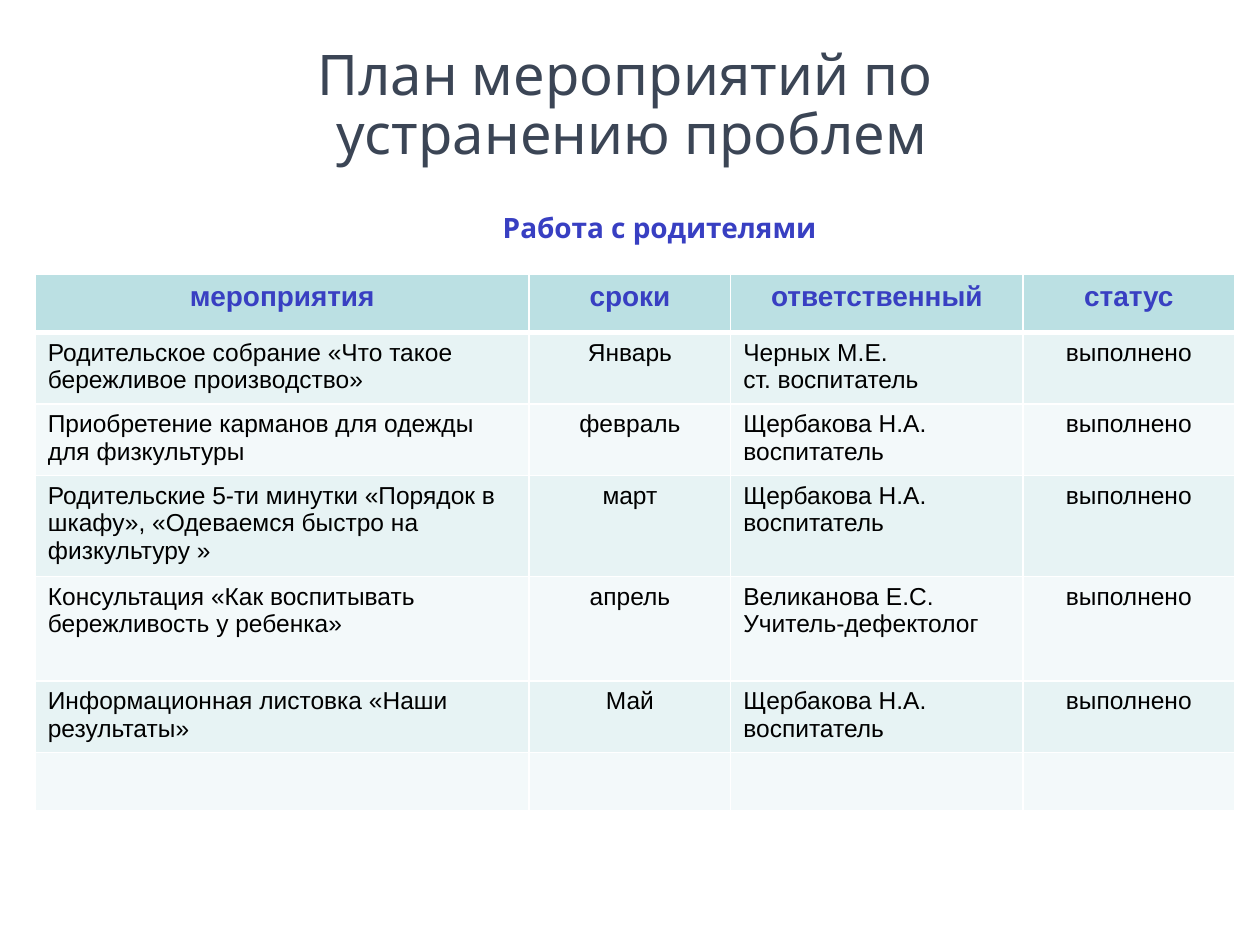
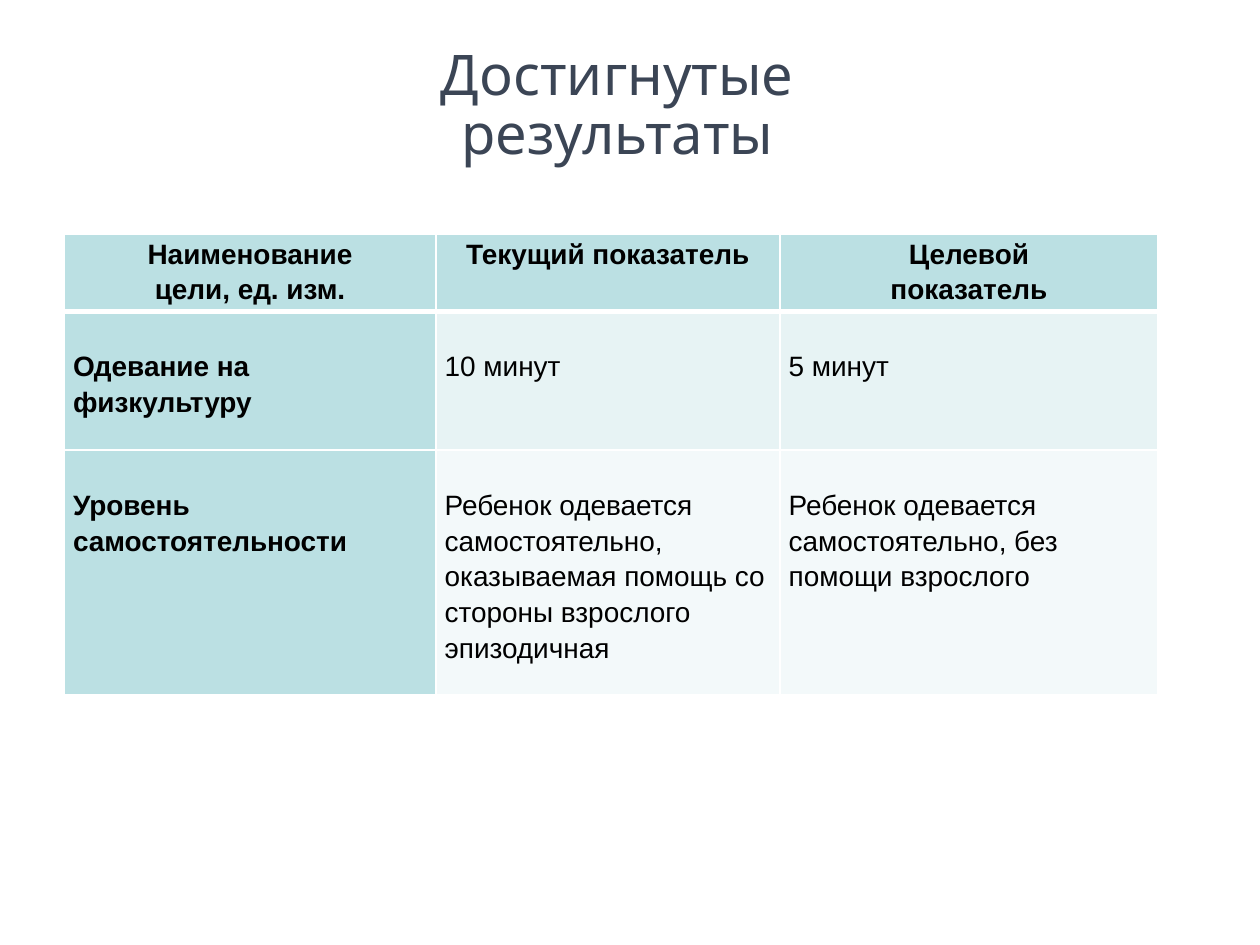
from dataclasses import dataclass
from lxml import etree
from pptx import Presentation
from pptx.dml.color import RGBColor
from pptx.enum.text import PP_ALIGN
from pptx.oxml.ns import qn
from pptx.util import Inches, Pt

LEFT, CENTER = PP_ALIGN.LEFT, PP_ALIGN.CENTER


@dataclass(frozen=True)
class Theme:
    title_font: str = "League Spartan"
    table_font: str = "Arial"
    title: str = "3B4555"
    accent: str = "383FC2"
    ink: str = "000000"
    header: str = "BBE0E3"
    bands: tuple = ("E7F3F4", "F3F9FA")
    border: str = "FFFFFF"
    title_size: int = 32
    heading_size: int = 16
    body_size: int = 14
    title_spacing: float = 0.88
    thin: int = 1
    thick: int = 3


THEME = Theme()
SLIDE_SIZE = (10, 7.5)
TITLE_TOP, TITLE_HEIGHT = 0.33, 1.1
DONE = "выполнено"
TEACHER = "Щербакова Н.А.\nвоспитатель"

PLAN = {
    "title": "План мероприятий по\v устранению проблем",
    "title_span": (1.85, 6.22),
    "subtitle": "Работа с родителями",
    "subtitle_box": (0.66, 1.62, 9.15, 0.31),
    "origin": (0.28, 2.18),
    "columns": (3.92, 1.6, 2.32, 1.68),
    "heights": (0.46, 0.54, 0.54, 0.76, 0.83, 0.54, 0.46),
    "aligns": (LEFT, CENTER, LEFT, CENTER),
    "header_color": THEME.accent,
    "body_size": THEME.body_size,
    "insets": (0.1, 0.05),
    "body_top": 0.05,
    "spacing": 1.0,
    "label_column": False,
    "rows": [
        ("мероприятия", "сроки", "ответственный", "статус"),
        ("Родительское собрание «Что такое бережливое производство»",
         "Январь", "Черных М.Е.\nст. воспитатель", DONE),
        ("Приобретение карманов для одежды для физкультуры",
         "февраль", TEACHER, DONE),
        ("Родительские 5-ти минутки «Порядок в шкафу», "
         "«Одеваемся быстро на физкультуру »", "март", TEACHER, DONE),
        ("Консультация «Как воспитывать бережливость у ребенка»",
         "апрель", "Великанова Е.С.\nУчитель-дефектолог", DONE),
        ("Информационная листовка «Наши результаты»", "Май", TEACHER, DONE),
        ("", "", "", ""),
    ],
}

RESULTS = {
    "title": "Достигнутые\vрезультаты",
    "title_span": (2.25, 5.3),
    "origin": (0.51, 1.86),
    "columns": (2.95, 2.73, 3),
    "heights": (0.56, 1.1, 1.94),
    "aligns": (LEFT, LEFT, LEFT),
    "header_color": THEME.ink,
    "body_size": THEME.heading_size,
    "insets": (0.07, 0),
    "body_top": 0.28,
    "spacing": 1.15,
    "label_column": True,
    "rows": [
        ("Наименование\nцели, ед. изм.", "Текущий показатель",
         "Целевой\nпоказатель"),
        ("Одевание на физкультуру", "10 минут", "5 минут"),
        ("Уровень самостоятельности",
         "Ребенок одевается самостоятельно, оказываемая помощь со стороны "
         "взрослого эпизодичная",
         "Ребенок одевается самостоятельно, без помощи взрослого"),
    ],
}


def write(frame, text, font, size, color, bold=False, align=CENTER, spacing=1.0):
    frame.word_wrap = True
    for number, paragraph_text in enumerate(text.split("\n")):
        paragraph = frame.add_paragraph() if number else frame.paragraphs[0]
        paragraph.alignment = align
        paragraph.line_spacing = spacing
        for line_number, line in enumerate(paragraph_text.split("\v")):
            if line_number:
                paragraph.add_line_break()
            run = paragraph.add_run()
            run.text = line
            run.font.name = font
            run.font.size = Pt(size)
            run.font.bold = bold
            run.font.color.rgb = RGBColor.from_string(color)


def add_text(slide, box, *args, **kwargs):
    frame = slide.shapes.add_textbox(*map(Inches, box)).text_frame
    write(frame, *args, **kwargs)


def set_borders(cell, top, bottom):
    properties = cell._tc.get_or_add_tcPr()
    widths = {"a:lnL": THEME.thin, "a:lnR": THEME.thin, "a:lnT": top, "a:lnB": bottom}
    for position, (tag, width) in enumerate(widths.items()):
        line = etree.Element(qn(tag), w=str(Pt(width)))
        fill = etree.SubElement(line, qn("a:solidFill"))
        etree.SubElement(fill, qn("a:srgbClr"), val=THEME.border)
        properties.insert(position, line)


def add_grid(slide, content):
    rows, columns, heights = content["rows"], content["columns"], content["heights"]
    area = (*content["origin"], sum(columns), sum(heights))
    table = slide.shapes.add_table(
        len(rows), len(columns), *map(Inches, area)).table
    for column, width in zip(table.columns, columns):
        column.width = Inches(width)
    for row, height in zip(table.rows, heights):
        row.height = Inches(height)
    side, edge = map(Inches, content["insets"])
    for r, row in enumerate(rows):
        is_header = r == 0
        for c, text in enumerate(row):
            cell = table.cell(r, c)
            is_label = is_header or (content["label_column"] and c == 0)
            cell.margin_left = cell.margin_right = side
            cell.margin_bottom = edge
            cell.margin_top = edge if is_header else Inches(content["body_top"])
            cell.fill.solid()
            cell.fill.fore_color.rgb = RGBColor.from_string(
                THEME.header if is_label else THEME.bands[(r - 1) % 2])
            set_borders(cell, THEME.thick if r == 1 else THEME.thin,
                        THEME.thick if is_header else THEME.thin)
            if text:
                write(cell.text_frame, text, THEME.table_font,
                      THEME.heading_size if is_header else content["body_size"],
                      content["header_color"] if is_header else THEME.ink,
                      bold=is_label,
                      align=CENTER if is_header else content["aligns"][c],
                      spacing=content["spacing"])


def add_page(deck, content):
    slide = deck.slides.add_slide(deck.slide_layouts[6])
    left, width = content["title_span"]
    add_text(slide, (left, TITLE_TOP, width, TITLE_HEIGHT), content["title"],
             THEME.title_font, THEME.title_size, THEME.title,
             spacing=THEME.title_spacing)
    if "subtitle" in content:
        add_text(slide, content["subtitle_box"], content["subtitle"],
                 THEME.title_font, THEME.heading_size, THEME.accent, bold=True)
    add_grid(slide, content)


def main():
    deck = Presentation()
    deck.slide_width, deck.slide_height = map(Inches, SLIDE_SIZE)
    for content in (PLAN, RESULTS):
        add_page(deck, content)
    deck.save("out.pptx")


if __name__ == "__main__":
    main()
